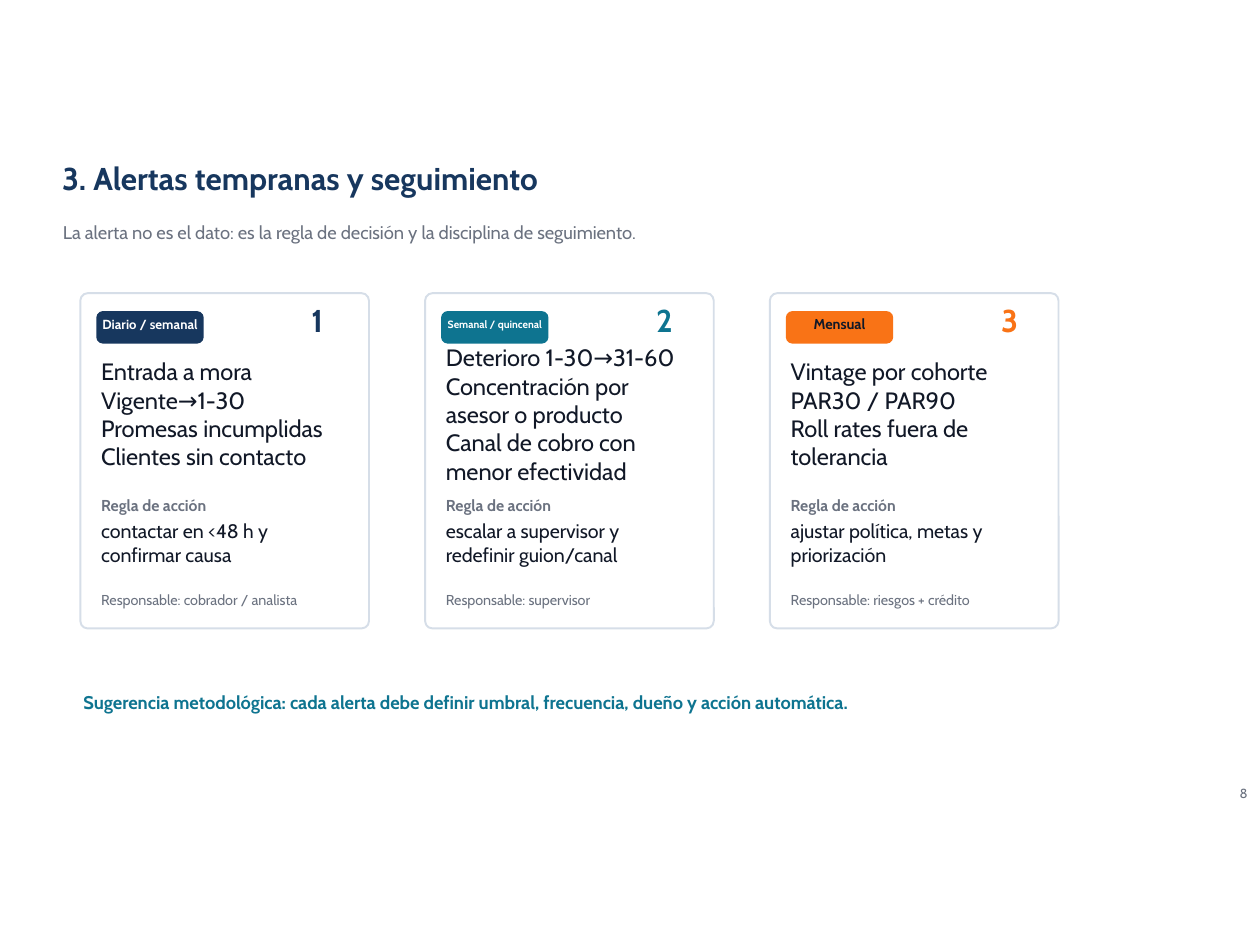
"""Build the slide on early warnings and follow-up with three alert cards."""
from pptx import Presentation
from pptx.dml.color import RGBColor
from pptx.enum.shapes import MSO_SHAPE as Shape
from pptx.enum.text import MSO_ANCHOR as Anchor, MSO_AUTO_SIZE as AutoSize, PP_ALIGN as Align
from pptx.util import Cm, Pt

COLORS = {"navy": "17375E", "teal": "0E7490", "orange": "F97316", "gray": "6B7280",
          "ink": "111827", "white": "FFFFFF", "border": "D6DEE8"}
FONT = "Cabin"

TITLE = "3. Alertas tempranas y seguimiento"
SUBTITLE = "La alerta no es el dato: es la regla de decisión y la disciplina de seguimiento."
TIP = ("Sugerencia metodológica: cada alerta debe definir umbral, frecuencia, "
       "dueño y acción automática.")
PAGE_NUMBER = "8"
RULE_LABEL = "Regla de acción"

CARDS = [
    {"badge": "Diario / semanal", "badge_size": 7.5, "badge_ink": "white", "accent": "navy",
     "alerts": ["Entrada a mora Vigente→1-30", "Promesas incumplidas", "Clientes sin contacto"],
     "action": "contactar en <48 h y confirmar causa",
     "owner": "Responsable: cobrador / analista"},
    {"badge": "Semanal / quincenal", "badge_size": 6, "badge_ink": "white", "accent": "teal",
     "alerts": ["Deterioro 1-30→31-60", "Concentración por asesor o producto",
                "Canal de cobro con menor efectividad"],
     "action": "escalar a supervisor y redefinir guion/canal",
     "owner": "Responsable: supervisor"},
    {"badge": "Mensual", "badge_size": 8.2, "badge_ink": "ink", "accent": "orange",
     "alerts": ["Vintage por cohorte", "PAR30 / PAR90", "Roll rates fuera de tolerancia"],
     "action": "ajustar política, metas y priorización",
     "owner": "Responsable: riesgos + crédito"},
]
CARD_LEFT, CARD_TOP, CARD_WIDTH, CARD_HEIGHT, CARD_PITCH = 1.62, 5.91, 5.82, 6.76, 6.95


def color(name):
    return RGBColor.from_string(COLORS[name])


def write(box, lines, size, ink, bold=False, align=Align.LEFT, inset=0):
    frame = box.text_frame
    settings = {"word_wrap": True, "auto_size": AutoSize.NONE, "vertical_anchor": Anchor.MIDDLE}
    settings.update({f"margin_{side}": Cm(inset) for side in ("left", "top", "right", "bottom")})
    for name, value in settings.items():
        setattr(frame, name, value)
    for index, line in enumerate(lines):
        para = frame.add_paragraph() if index else frame.paragraphs[0]
        para.alignment = align
        span = para.add_run()
        span.text = line
        for name, value in {"name": FONT, "size": Pt(size), "bold": bold}.items():
            setattr(span.font, name, value)
        span.font.color.rgb = color(ink)


def add_text(page, place, lines, size, ink, **options):
    write(page.shapes.add_textbox(*map(Cm, place)), lines, size, ink, **options)


def add_panel(page, place, fill, line, width, rounding):
    panel = page.shapes.add_shape(Shape.ROUNDED_RECTANGLE, *map(Cm, place))
    panel.adjustments[0] = rounding
    panel.shadow.inherit = False
    panel.fill.solid()
    panel.fill.fore_color.rgb = color(fill)
    panel.line.color.rgb = color(line)
    panel.line.width = Pt(width)


def add_card(page, left, number, card):
    accent = card["accent"]
    badge_left, text_left = left + 0.34, left + 0.42
    add_panel(page, (left, CARD_TOP, CARD_WIDTH, CARD_HEIGHT), "white", "border", 1.1, 0.026)
    add_panel(page, (badge_left, 6.29, 2.13, 0.62), accent, accent, 1, 0.188)
    add_text(page, (badge_left, 6.38, 2.13, 0.3), [card["badge"]], card["badge_size"],
             card["badge_ink"], bold=True, align=Align.CENTER)
    add_text(page, (left + 4.66, 6.2, 0.6, 0.48), [str(number)], 18, accent, bold=True)
    for top, width, height, lines, size, ink, bold in (
        (7.34, 4.85, 2.01, card["alerts"], 13.5, "ink", False),
        (10, 2.67, 0.36, [RULE_LABEL], 9, "gray", True),
        (10.46, 4.85, 0.97, [card["action"]], 11.2, "ink", False),
        (11.91, 4.78, 0.36, [card["owner"]], 8.2, "gray", False),
    ):
        add_text(page, (text_left, top, width, height), lines, size, ink, bold=bold)


def main():
    deck = Presentation()
    deck.slide_width, deck.slide_height = Cm(25.4), Cm(19.05)
    page = deck.slides.add_slide(deck.slide_layouts[5])
    title = page.shapes.title
    for name, value in {"left": 1.25, "top": 3.1, "width": 17.53, "height": 0.97}.items():
        setattr(title, name, Cm(value))
    write(title, [TITLE], 18, "navy", bold=True)
    add_text(page, (1.27, 4.45, 17.53, 0.46), [SUBTITLE], 10.5, "gray")
    for index, card in enumerate(CARDS):
        add_card(page, CARD_LEFT + index * CARD_PITCH, index + 1, card)
    add_text(page, (1.68, 13.97, 21.72, 0.38), [TIP], 10.5, "teal", bold=True)
    add_text(page, (24.36, 15.77, 1.04, 0.46), [PAGE_NUMBER], 7.5, "gray",
             align=Align.RIGHT, inset=0.25)
    deck.save("out.pptx")


if __name__ == "__main__":
    main()
